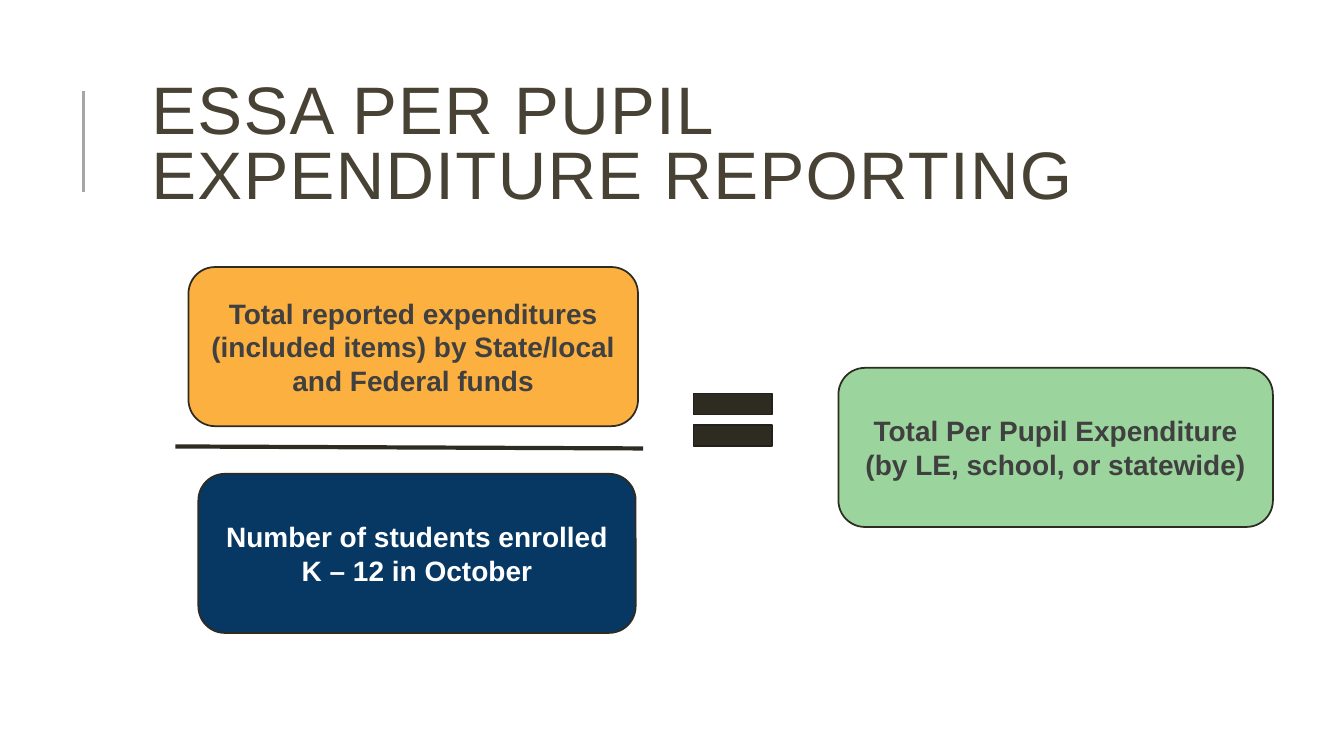
import pptx
import pptx.dml.color
import pptx.enum.shapes
import pptx.enum.text
import pptx.oxml
import pptx.util
from pptx.util import Cm

INK = "2E2B21"
ALIGN = pptx.enum.text.PP_ALIGN
SHAPES = pptx.enum.shapes.MSO_SHAPE


def paint(color_format, color):
    color_format.rgb = pptx.dml.color.RGBColor.from_string(color)


def write_text(shape, text, size=20, color="404041", bold=True,
               align=ALIGN.CENTER, line_spacing=1.0, letter_spacing=0):
    frame = shape.text_frame
    frame.word_wrap = True
    frame.auto_size = pptx.enum.text.MSO_AUTO_SIZE.NONE
    frame.vertical_anchor = pptx.enum.text.MSO_ANCHOR.MIDDLE
    frame.text = text
    for paragraph in frame.paragraphs:
        paragraph.alignment = align
        paragraph.line_spacing = line_spacing
        run = paragraph.runs[0]
        run.font.name = "Arial"
        run.font.size = pptx.util.Pt(size)
        run.font.bold = bold
        paint(run.font.color, color)
        if letter_spacing:
            run.font._element.set("spc", str(letter_spacing * 100))


presentation = pptx.Presentation()
presentation.slide_width = Cm(33.87)
presentation.slide_height = Cm(19.05)
slide = presentation.slides.add_slide(presentation.slide_layouts[5])

title = slide.shapes.title
title.left, title.top, title.width, title.height = Cm(3.56), Cm(1.63), Cm(27), Cm(4.17)
write_text(title, "ESSA PER PUPIL EXPENDITURE REPORTING", size=48, color="474233",
           bold=False, align=ALIGN.LEFT, line_spacing=0.8, letter_spacing=1)

formula = slide.shapes.add_group_shape()

boxes = [
    ("Total reported expenditures (included items) by State/local and Federal funds",
     4.75, 6.73, 11.33, "FBB040", "404041"),
    ("Total Per Pupil Expenditure (by LE, school, or statewide)",
     21.13, 9.27, 10.95, "9CD49D", "404041"),
    ("Number of students enrolled\nK – 12 in October",
     5.0, 11.94, 11.02, "073763", "FFFFFF"),
]
for text, left, top, width, fill, text_color in boxes:
    box = formula.shapes.add_shape(SHAPES.ROUNDED_RECTANGLE,
                                   Cm(left), Cm(top), Cm(width), Cm(4.01))
    box.shadow.inherit = False
    box.fill.solid()
    paint(box.fill.fore_color, fill)
    paint(box.line.color, INK)
    box.line.width = pptx.util.Pt(1.25)
    write_text(box, text, color=text_color)

equals = formula.shapes.add_shape(SHAPES.MATH_EQUAL, Cm(17.12), Cm(9.45), Cm(2.69), Cm(2.26))
equals.shadow.inherit = False
equals.fill.solid()
paint(equals.fill.fore_color, INK)
paint(equals.line.color, "222018")
equals.line.width = pptx.util.Pt(1.25)

lines = [
    (slide.shapes, 2.11, 4.83, 2.11, 2.29, "A6A6A6", 1.75),
    (formula.shapes, 4.42, 11.25, 16.21, 11.3, INK, 3),
]
for shapes, begin_x, begin_y, end_x, end_y, color, width in lines:
    line = shapes.add_connector(pptx.enum.shapes.MSO_CONNECTOR.STRAIGHT,
                                Cm(begin_x), Cm(begin_y), Cm(end_x), Cm(end_y))
    paint(line.line.color, color)
    line.line.width = pptx.util.Pt(width)
    line._element.spPr.append(pptx.oxml.parse_xml(
        '<a:effectLst xmlns:a="http://schemas.openxmlformats.org/drawingml/2006/main"/>'))

presentation.save("out.pptx")
